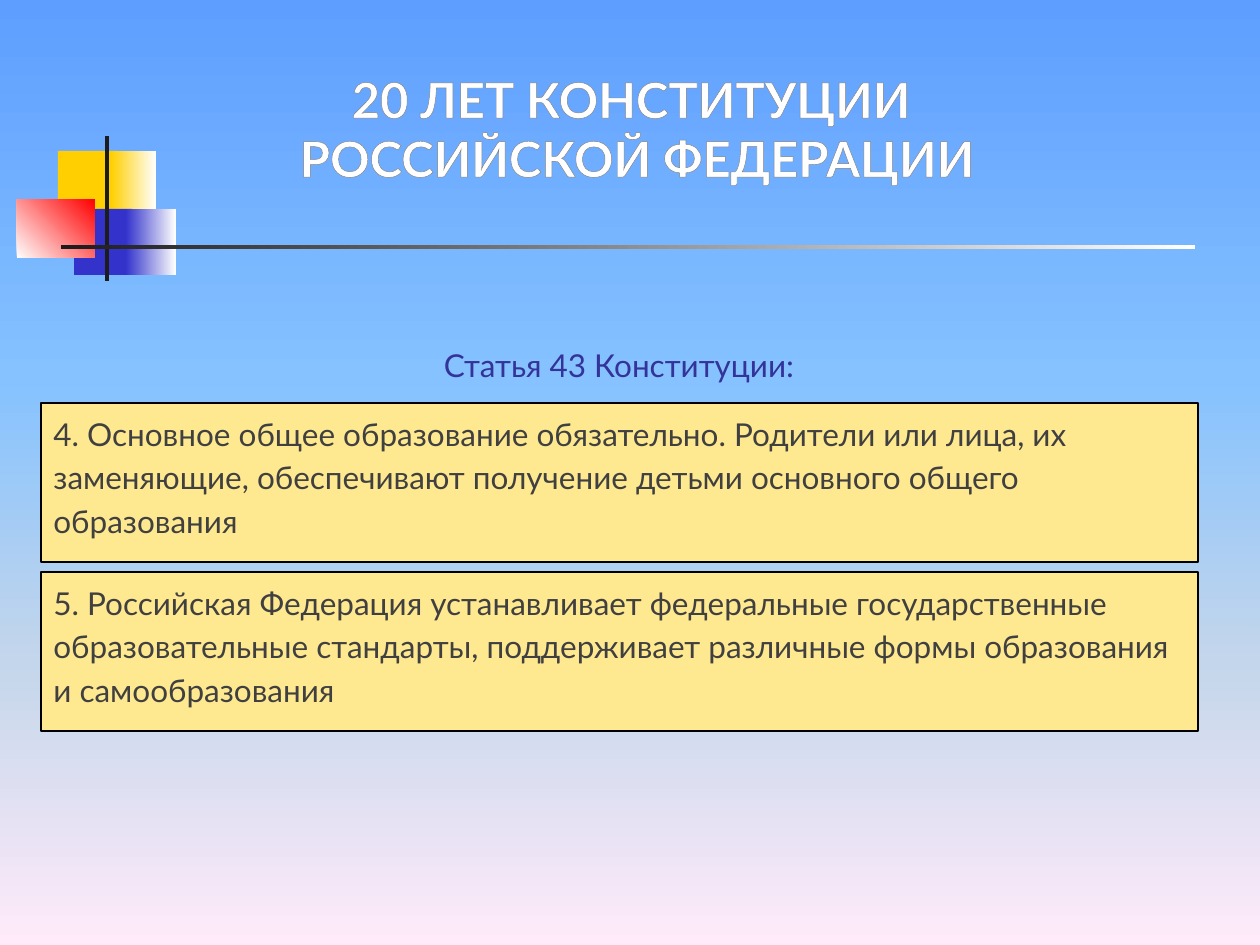
from dataclasses import dataclass

from lxml import etree
from pptx import Presentation
from pptx.dml.color import RGBColor
from pptx.enum.shapes import MSO_SHAPE
from pptx.enum.text import MSO_AUTO_SIZE, PP_ALIGN
from pptx.oxml.ns import qn
from pptx.util import Emu, Pt

RECTANGLE = MSO_SHAPE.RECTANGLE
ROUNDED_RECTANGLE = MSO_SHAPE.ROUNDED_RECTANGLE
CENTER = PP_ALIGN.CENTER
LEFT = PP_ALIGN.LEFT
FIT_SHAPE = MSO_AUTO_SIZE.SHAPE_TO_FIT_TEXT

EMU_PER_INCH = 914400
PX_PER_INCH = 126
FONT = "Lato"

WHITE = RGBColor(0xFF, 0xFF, 0xFF)
BLACK = RGBColor(0x00, 0x00, 0x00)
INK = RGBColor(0x1C, 0x1C, 0x1C)
YELLOW = RGBColor(0xFF, 0xCF, 0x01)
BLUE = RGBColor(0x33, 0x33, 0xCC)
RED = RGBColor(0xFF, 0x00, 0x00)
CARD_FILL = RGBColor(0xFF, 0xE9, 0x90)
CARD_TEXT = RGBColor(0x40, 0x40, 0x40)
SUBTITLE_TEXT = RGBColor(0x33, 0x33, 0x99)
TITLE_OUTLINE = RGBColor(0x80, 0x80, 0x80)
SKY = (
    (0, RGBColor(0x5E, 0x9E, 0xFF)),
    (40, RGBColor(0x85, 0xC2, 0xFF)),
    (70, RGBColor(0xC4, 0xD6, 0xEB)),
    (100, RGBColor(0xFF, 0xEB, 0xFA)),
)


@dataclass(frozen=True)
class Box:
    left: int
    top: int
    width: int
    height: int

    def emu(self) -> tuple:
        lengths = (self.left, self.top, self.width, self.height)
        return tuple(px(length) for length in lengths)


@dataclass(frozen=True)
class Block:
    box: Box
    colors: tuple
    angle: int = 0


@dataclass(frozen=True)
class TextStyle:
    size: int
    color: RGBColor
    alignment: PP_ALIGN
    bold: bool = False
    line_spacing: float = 1.0
    space_after: float = 0


ORNAMENT = (
    Block(Box(58, 151, 60, 66), (YELLOW,)),
    Block(Box(111, 151, 45, 66), (YELLOW, WHITE)),
    Block(Box(74, 209, 58, 66), (BLUE,)),
    Block(Box(126, 209, 50, 66), (BLUE, WHITE)),
    Block(Box(17, 199, 78, 59), (WHITE, RED), 45),
    Block(Box(105, 136, 4, 145), (INK,)),
    Block(Box(61, 245, 1134, 4), (INK, WHITE)),
)

TITLE = "20 ЛЕТ КОНСТИТУЦИИ \vРОССИЙСКОЙ ФЕДЕРАЦИИ"
SUBTITLE = "Статья 43 Конституции:"
CARDS = (
    "4. Основное общее образование обязательно. Родители или лица, их "
    "заменяющие, обеспечивают получение детьми основного общего образования",
    "5. Российская Федерация устанавливает федеральные государственные "
    "образовательные стандарты, поддерживает различные формы образования "
    "и самообразования",
)
CARD_TOP = 403
CARD_STEP = 169

TITLE_STYLE = TextStyle(28, WHITE, CENTER, bold=True)
SUBTITLE_STYLE = TextStyle(18, SUBTITLE_TEXT, CENTER, line_spacing=1.15, space_after=10)
CARD_STYLE = TextStyle(18, CARD_TEXT, LEFT, line_spacing=1.15, space_after=8.4)


def px(length: int) -> Emu:
    return Emu(round(length * EMU_PER_INCH / PX_PER_INCH))


def set_gradient(fill, element, stops: tuple, angle: int) -> None:
    fill.gradient()
    fill.gradient_angle = angle
    stop_list = element.find(".//" + qn("a:gsLst"))
    for old_stop in list(stop_list):
        stop_list.remove(old_stop)
    for percent, color in stops:
        stop = etree.SubElement(stop_list, qn("a:gs"), pos=str(percent * 1000))
        etree.SubElement(stop, qn("a:srgbClr"), val=str(color))


def add_block(slide, block: Block) -> None:
    shape = slide.shapes.add_shape(RECTANGLE, *block.box.emu())
    shape.shadow.inherit = False
    shape.line.fill.background()
    if len(block.colors) == 1:
        shape.fill.solid()
        shape.fill.fore_color.rgb = block.colors[0]
    else:
        stops = tuple(zip((0, 100), block.colors))
        set_gradient(shape.fill, shape.element, stops, block.angle)


def write_text(shape, text: str, style: TextStyle) -> None:
    paragraph = shape.text_frame.paragraphs[0]
    paragraph.text = text
    paragraph.alignment = style.alignment
    paragraph.line_spacing = style.line_spacing
    paragraph.space_after = Pt(style.space_after)
    font = paragraph.font
    font.name = FONT
    font.size = Pt(style.size)
    font.bold = style.bold
    font.color.rgb = style.color


def add_text(slide, box: Box, text: str, style: TextStyle, wrap: bool):
    shape = slide.shapes.add_textbox(*box.emu())
    shape.text_frame.word_wrap = wrap
    write_text(shape, text, style)
    return shape


def outline_text(shape, color: RGBColor) -> None:
    properties = shape.element.find(".//" + qn("a:defRPr"))
    line = etree.Element(qn("a:ln"), w=str(Pt(1)))
    fill = etree.SubElement(line, qn("a:solidFill"))
    etree.SubElement(fill, qn("a:srgbClr"), val=str(color))
    properties.insert(0, line)


def add_card(slide, box: Box, text: str) -> None:
    shape = slide.shapes.add_shape(ROUNDED_RECTANGLE, *box.emu())
    shape.adjustments[0] = 0
    shape.shadow.inherit = False
    shape.fill.solid()
    shape.fill.fore_color.rgb = CARD_FILL
    shape.line.color.rgb = BLACK
    shape.line.width = Pt(0.75)
    shape.text_frame.vertical_anchor = None
    write_text(shape, text, CARD_STYLE)


def main() -> None:
    presentation = Presentation()
    presentation.slide_width = px(1260)
    presentation.slide_height = px(945)
    slide = presentation.slides.add_slide(presentation.slide_layouts[6])
    set_gradient(slide.background.fill, slide.element, SKY, 270)

    for block in ORNAMENT:
        add_block(slide, block)

    title = add_text(slide, Box(276, 63, 722, 131), TITLE, TITLE_STYLE, wrap=False)
    title.text_frame.auto_size = FIT_SHAPE
    outline_text(title, TITLE_OUTLINE)

    for index, text in enumerate(CARDS):
        add_card(slide, Box(41, CARD_TOP + index * CARD_STEP, 1157, 159), text)

    add_text(slide, Box(41, 334, 1156, 69), SUBTITLE, SUBTITLE_STYLE, wrap=True)
    presentation.save("out.pptx")


if __name__ == "__main__":
    main()
